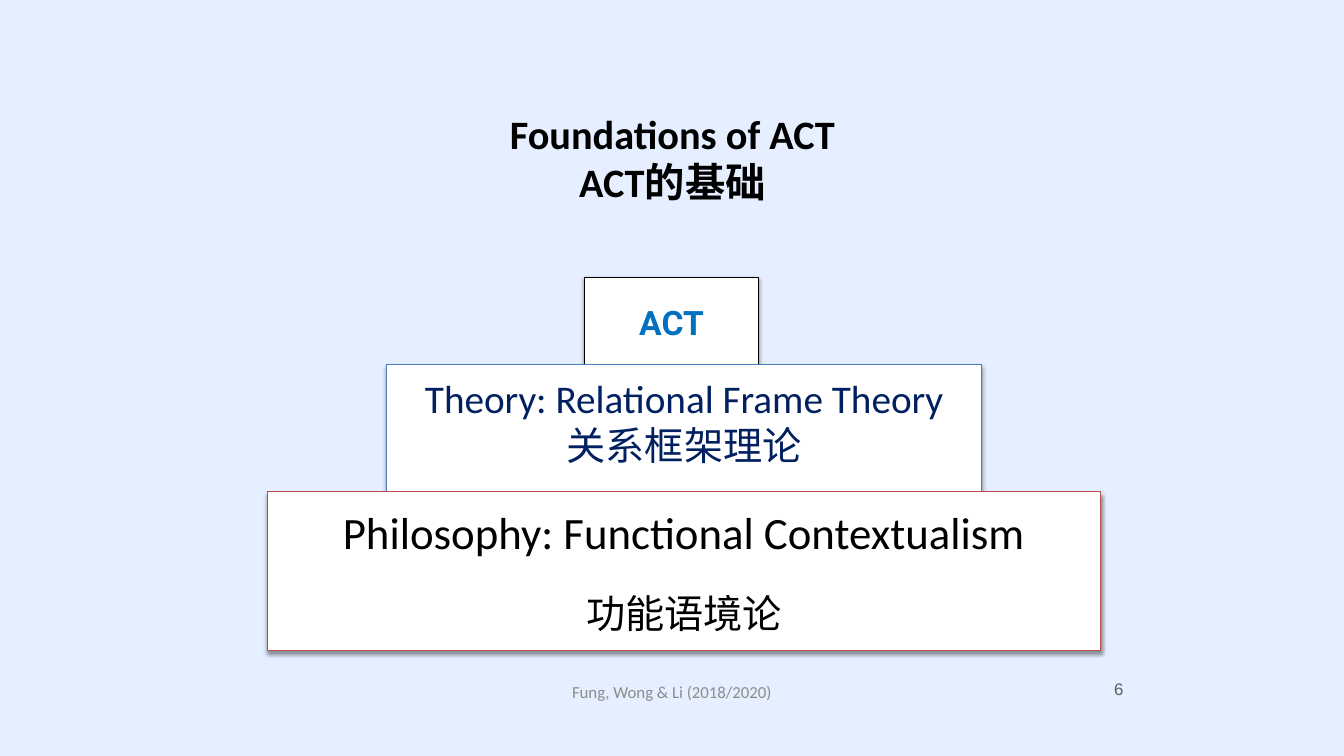
from dataclasses import dataclass

from lxml import etree
from pptx import Presentation
from pptx.dml.color import RGBColor
from pptx.enum.shapes import MSO_SHAPE as Shape
from pptx.enum.text import MSO_ANCHOR as Anchor, PP_ALIGN as Align
from pptx.oxml.ns import qn
from pptx.util import Inches, Pt


@dataclass(frozen=True)
class Theme:
    background: str = "E5EFFF"
    white: str = "FFFFFF"
    black: str = "000000"
    blue: str = "0070C0"
    navy: str = "002060"
    blue_line: str = "4B7EBC"
    red_line: str = "BF4C48"
    footer: str = "8C8C8C"
    number: str = "5E5E5E"
    title_size: float = 28.8
    top_size: float = 24
    middle_size: float = 28
    base_size: float = 32
    small_size: float = 12
    body_font: str = "Calibri"
    accent_font: str = "Roboto"
    number_font: str = "Arial"


def write_line(frame, text, size, color, font="Calibri", bold=False,
               align=Align.CENTER, space_before=0):
    paragraph = frame.paragraphs[0]
    if paragraph.runs:
        paragraph = frame.add_paragraph()
    paragraph.alignment = align
    paragraph.space_before = Pt(space_before)
    run = paragraph.add_run()
    run.text = text
    run.font.size = Pt(size)
    run.font.name = font
    run.font.bold = bold
    run.font.color.rgb = RGBColor.from_string(color)


def add_shadow(shape, color):
    effects = etree.SubElement(shape.element.spPr, qn("a:effectLst"))
    shadow = etree.SubElement(
        effects, qn("a:outerShdw"), blurRad=str(Pt(3.1)), dist=str(Pt(1.6)),
        dir="5400000", rotWithShape="0")
    tint = etree.SubElement(shadow, qn("a:srgbClr"), val=color)
    etree.SubElement(tint, qn("a:alpha"), val="38000")


class SlideBuilder:
    def __init__(self, slide, theme):
        self.slide = slide
        self.theme = theme
        fill = slide.background.fill
        fill.solid()
        fill.fore_color.rgb = RGBColor.from_string(theme.background)

    def text(self, left, top, width, height, lines, **style):
        box = self.slide.shapes.add_textbox(
            Inches(left), Inches(top), Inches(width), Inches(height))
        frame = box.text_frame
        frame.word_wrap = True
        frame.vertical_anchor = Anchor.MIDDLE
        for line in lines:
            write_line(frame, line, **style)

    def block(self, left, top, width, height, outline, bottom_inset=0.05):
        shape = self.slide.shapes.add_shape(
            Shape.RECTANGLE, Inches(left), Inches(top), Inches(width), Inches(height))
        shape.fill.solid()
        shape.fill.fore_color.rgb = RGBColor.from_string(self.theme.white)
        shape.line.color.rgb = RGBColor.from_string(outline)
        shape.line.width = Pt(0.75)
        add_shadow(shape, self.theme.black)
        frame = shape.text_frame
        frame.word_wrap = True
        frame.vertical_anchor = Anchor.MIDDLE
        frame.margin_left = frame.margin_right = frame.margin_top = Inches(0.05)
        frame.margin_bottom = Inches(bottom_inset)
        return frame


def main():
    theme = Theme()
    presentation = Presentation()
    presentation.slide_width = Inches(13.33)
    presentation.slide_height = Inches(7.5)
    slide = presentation.slides.add_slide(presentation.slide_layouts[6])
    builder = SlideBuilder(slide, theme)

    builder.text(2.17, 1.11, 9, 0.9, ["Foundations of ACT", "ACT的基础"],
                 size=theme.title_size, color=theme.black, font=theme.body_font, bold=True)
    builder.text(8.91, 6.63, 2.33, 0.4, ["6"], size=theme.small_size,
                 color=theme.number, font=theme.number_font, align=Align.RIGHT)

    therapy = builder.block(5.8, 2.75, 1.72, 0.9, theme.black)
    write_line(therapy, "ACT", theme.top_size, theme.blue, theme.accent_font, bold=True)

    theory = builder.block(3.83, 3.62, 5.91, 1.42, theme.blue_line, bottom_inset=0.35)
    for line in ("Theory: Relational Frame Theory", "关系框架理论"):
        write_line(theory, line, theme.middle_size, theme.navy, theme.body_font)

    philosophy = builder.block(2.65, 4.88, 8.27, 1.57, theme.red_line)
    write_line(philosophy, "Philosophy: Functional Contextualism",
               theme.base_size, theme.black, theme.body_font)
    write_line(philosophy, "功能语境论", theme.middle_size, theme.black,
               theme.accent_font, space_before=22)

    builder.text(5.08, 6.66, 3.17, 0.4, ["Fung, Wong & Li (2018/2020)"],
                 size=theme.small_size, color=theme.footer, font=theme.body_font)

    presentation.save("out.pptx")


if __name__ == "__main__":
    main()
